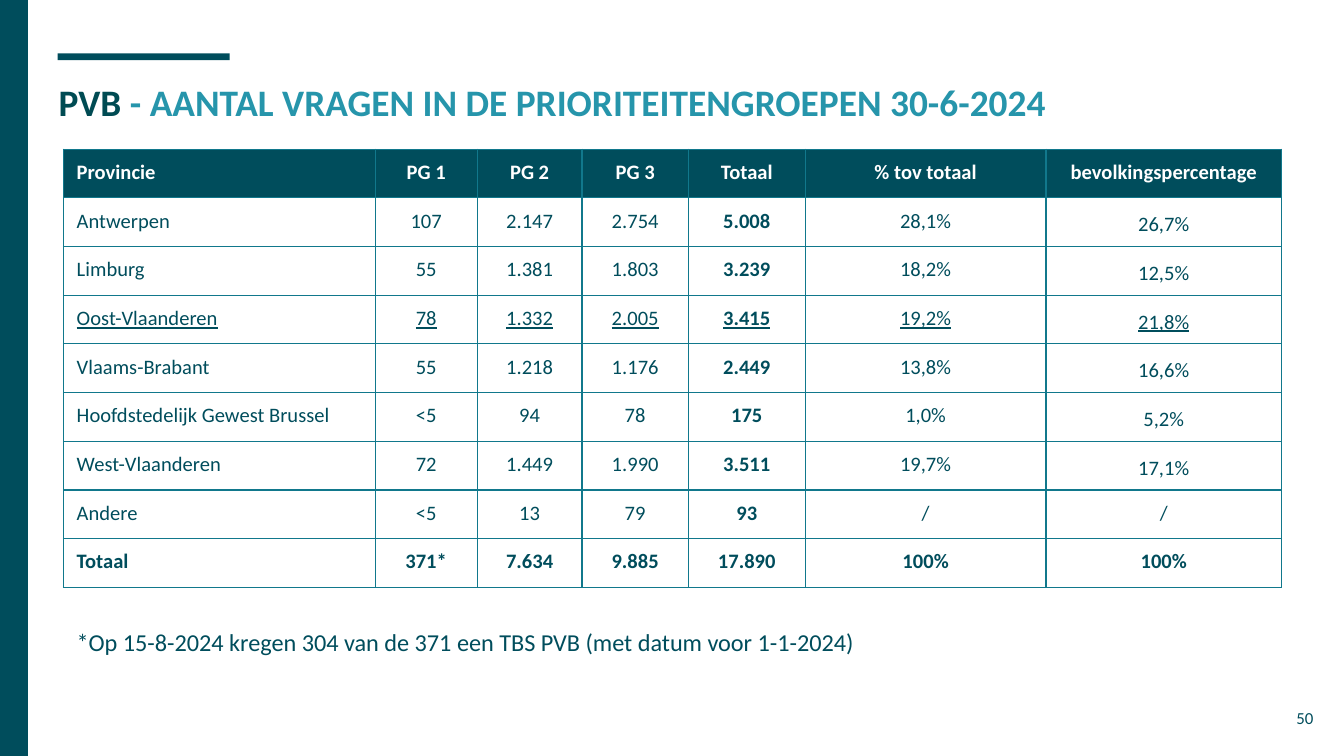
from lxml.etree import SubElement
from pptx import Presentation
from pptx.dml.color import RGBColor
from pptx.enum.shapes import MSO_SHAPE
from pptx.enum.text import MSO_ANCHOR, PP_ALIGN
from pptx.oxml.ns import qn
from pptx.util import Cm, Pt

# Content
TITLE = [("PVB ", "004B53"), ("- AANTAL VRAGEN IN DE PRIORITEITENGROEPEN 30-6-2024", "2695AB")]
ROWS = [
    ("Provincie", "PG 1", "PG 2", "PG 3", "Totaal", "% tov totaal", "bevolkingspercentage"),
    ("Antwerpen", "107", "2.147", "2.754", "5.008", "28,1%", "26,7%"),
    ("Limburg", "55", "1.381", "1.803", "3.239", "18,2%", "12,5%"),
    ("Oost-Vlaanderen", "78", "1.332", "2.005", "3.415", "19,2%", "21,8%"),
    ("Vlaams-Brabant", "55", "1.218", "1.176", "2.449", "13,8%", "16,6%"),
    ("Hoofdstedelijk Gewest Brussel", "<5", "94", "78", "175", "1,0%", "5,2%"),
    ("West-Vlaanderen", "72", "1.449", "1.990", "3.511", "19,7%", "17,1%"),
    ("Andere", "<5", "13", "79", "93", "/", "/"),
    ("Totaal", "371*", "7.634", "9.885", "17.890", "100%", "100%"),
]
FOOTNOTE = "*Op 15-8-2024 kregen 304 van de 371 een TBS PVB (met datum voor 1-1-2024)"
PAGE = "50"

# Style
FONT, TEAL, GRID, WHITE = "Calibri", "004D5C", "11788C", "FFFFFF"
COLUMN_WIDTHS = [5.89, 1.93, 1.98, 2.01, 2.21, 4.55, 4.45]
ROW_HEIGHT = 0.92
UNDERLINED = "Oost-Vlaanderen"


def color(hex_code):
    return RGBColor.from_string(hex_code)


def write(frame, text, size=11, fill=TEAL, bold=False, underline=False,
          align=PP_ALIGN.LEFT, spacing=None):
    """Add a run to the first paragraph of a text frame."""
    paragraph = frame.paragraphs[0]
    paragraph.alignment = align
    if spacing:
        paragraph.line_spacing = spacing
    run = paragraph.add_run()
    run.text = text
    font = run.font
    font.name, font.size, font.bold, font.underline = FONT, Pt(size), bold, underline
    font.color.rgb = color(fill)


def add_bar(left, top, width, height):
    bar = slide.shapes.add_shape(MSO_SHAPE.RECTANGLE, Cm(left), Cm(top), Cm(width), Cm(height))
    bar.shadow.inherit = False
    bar.fill.solid()
    bar.fill.fore_color.rgb = color(TEAL)
    bar.line.fill.background()


def add_frame(left, top, width, height):
    frame = slide.shapes.add_textbox(Cm(left), Cm(top), Cm(width), Cm(height)).text_frame
    frame.word_wrap = True
    frame.vertical_anchor = MSO_ANCHOR.TOP
    frame.margin_left = frame.margin_right = frame.margin_top = frame.margin_bottom = Cm(0.25)
    return frame


def set_borders(cell):
    properties = cell._tc.get_or_add_tcPr()
    for position, side in enumerate(("a:lnL", "a:lnR", "a:lnT", "a:lnB")):
        line = SubElement(properties, qn(side), w=str(Pt(0.75)))
        SubElement(SubElement(line, qn("a:solidFill")), qn("a:srgbClr"), val=GRID)
        properties.remove(line)
        properties.insert(position, line)


deck = Presentation()
deck.slide_width, deck.slide_height = Cm(25.4), Cm(14.29)
slide = deck.slides.add_slide(deck.slide_layouts[6])

# Accent bars
add_bar(1.09, 1.01, 3.25, 0.13)
add_bar(0, 0, 0.53, 14.29)

# Title
title = add_frame(0.86, 1.25, 23.67, 1.6)
for part, part_color in TITLE:
    write(title, part, size=20, fill=part_color, bold=True)

# Page number
write(add_frame(23.55, 13.19, 1.52, 1.09), PAGE, size=9, align=PP_ALIGN.RIGHT)

# Table of requests per province
last_row, last_column, total_column = len(ROWS) - 1, len(COLUMN_WIDTHS) - 1, 4
requests = slide.shapes.add_table(
    len(ROWS), len(COLUMN_WIDTHS), Cm(1.2), Cm(2.82),
    Cm(sum(COLUMN_WIDTHS)), Cm(ROW_HEIGHT * len(ROWS))).table
requests.horz_banding = False
for column, width in zip(requests.columns, COLUMN_WIDTHS):
    column.width = Cm(width)
for r, values in enumerate(ROWS):
    requests.rows[r].height = Cm(ROW_HEIGHT)
    for c, value in enumerate(values):
        cell = requests.cell(r, c)
        cell.margin_left = cell.margin_right = Cm(0.25)
        cell.margin_top, cell.margin_bottom = Cm(0.2), 0
        cell.vertical_anchor = MSO_ANCHOR.TOP
        cell.fill.solid()
        cell.fill.fore_color.rgb = color(TEAL if r == 0 else WHITE)
        set_borders(cell)
        write(cell.text_frame, value,
              fill=WHITE if r == 0 else TEAL,
              bold=r in (0, last_row) or c == total_column,
              underline=values[0] == UNDERLINED,
              align=PP_ALIGN.CENTER if c else PP_ALIGN.LEFT,
              spacing=1.15 if c == last_column and 0 < r < last_row - 1 else None)

# Footnote
write(add_frame(1.2, 11.61, 20.12, 1.07), FOOTNOTE, size=13)

deck.save("out.pptx")
